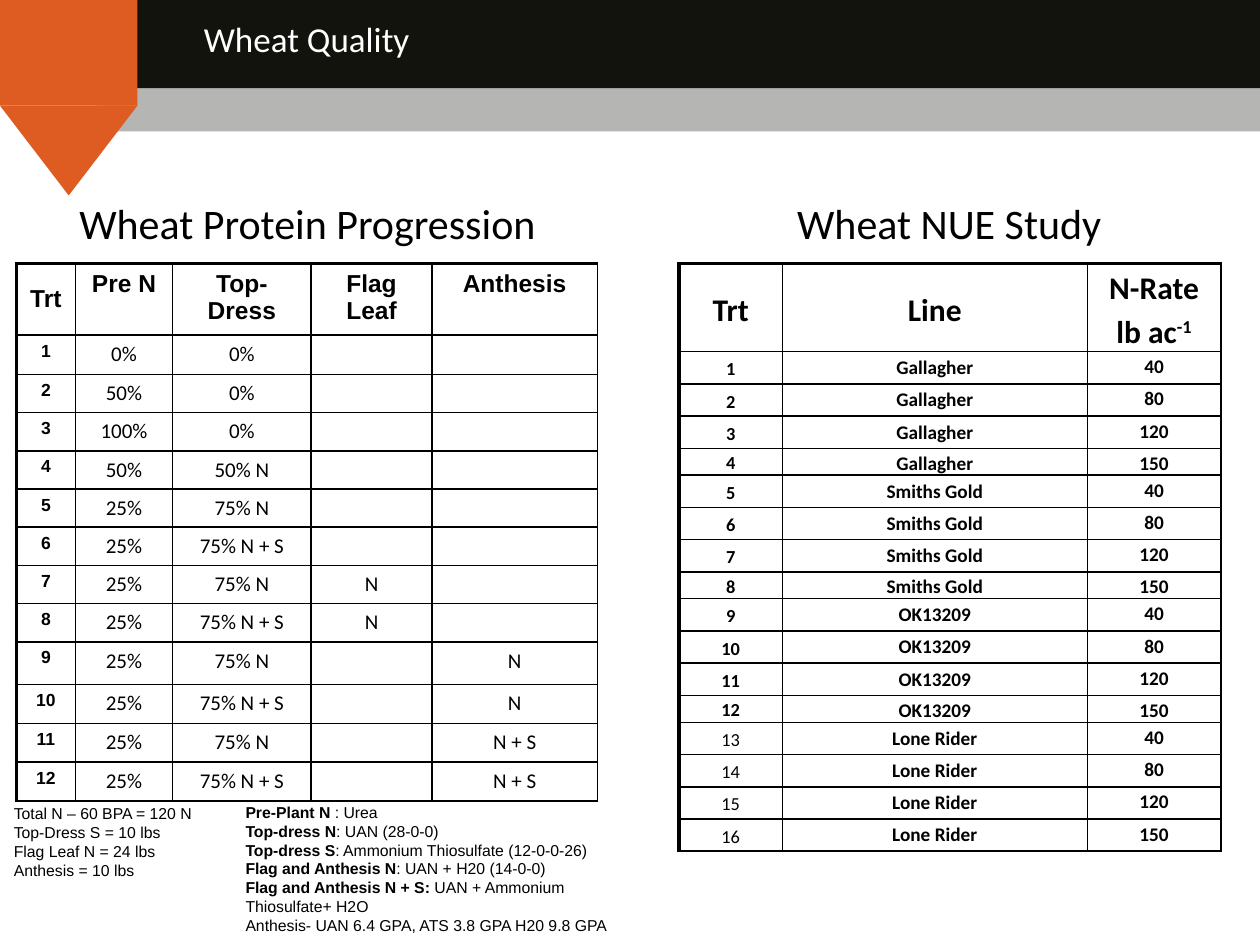
import lxml.etree
import pptx
import pptx.dml.color
import pptx.enum.shapes
import pptx.enum.text
import pptx.oxml.ns
import pptx.util

Cm, Pt = pptx.util.Cm, pptx.util.Pt
RGB = pptx.dml.color.RGBColor
SHAPE = pptx.enum.shapes.MSO_SHAPE
ALIGN = pptx.enum.text.PP_ALIGN
ANCHOR = pptx.enum.text.MSO_ANCHOR
qn = pptx.oxml.ns.qn

BLACK = RGB(0x00, 0x00, 0x00)
WHITE = RGB(0xFF, 0xFF, 0xFF)
INK = RGB(0x13, 0x13, 0x0D)
GREY = RGB(0xA9, 0xAA, 0xA8)
ORANGE = RGB(0xDE, 0x5B, 0x21)

BANNER_TITLE = dict(name="Calibri", size=Pt(20))
TITLE = dict(name="Calibri", size=Pt(24))
NOTE = dict(name="Arial", size=Pt(9))
HEAD = dict(name="Arial", size=Pt(14), bold=True)
TRT = dict(name="Arial", size=Pt(10), bold=True)
DOSE = dict(name="Calibri", size=Pt(12), bold=False)
NUE_HEAD = dict(name="Calibri", size=Pt(18), bold=True)
NUE_TRT = dict(name="Calibri", size=Pt(10.5))
NUE_BODY = dict(name="Calibri", size=Pt(11), bold=True)

PRE_N = ["0%", "50%", "100%", "50%"] + ["25%"] * 8
TOP_DRESS = ["0%"] * 3 + ["50% N"] + ["75% N", "75% N + S"] * 4
FLAG_LEAF = [""] * 6 + ["N"] * 2 + [""] * 4
ANTHESIS = [""] * 8 + ["N"] * 2 + ["N + S"] * 2
LINES = ["Gallagher", "Smiths Gold", "OK13209", "Lone Rider"]
RATES = ["40", "80", "120", "150"]

RATE_NOTES = [[("Total N – 60 BPA = 120 N\nTop-Dress S = 10 lbs\n"
                "Flag Leaf N = 24 lbs\nAnthesis = 10 lbs", False)]]
SOURCE_NOTES = [
    [("Pre-Plant N ", True), (": Urea\n", False),
     ("Top-dress N", True), (": UAN (28-0-0)", False)],
    [("Top-dress S", True), (": Ammonium Thiosulfate (12-0-0-26)\n", False),
     ("Flag and Anthesis N", True), (": UAN + H20 (14-0-0)\n", False),
     ("Flag and Anthesis N + S: ", True),
     ("UAN + Ammonium Thiosulfate+ H2O", False)],
    [("Anthesis- UAN 6.4 GPA, ATS 3.8 GPA H20 9.8 GPA", False)],
]


def add_text(p, text, fmt, color=BLACK):
    """Add text to a paragraph, with a line break at each newline."""
    for i, part in enumerate(text.split("\n")):
        if i:
            p.add_line_break()
        if part:
            r = p.add_run()
            r.text = part
            for key, value in fmt.items():
                setattr(r.font, key, value)
            r.font.color.rgb = color


def add_box(slide, x, y, w, h, paragraphs, fmt, color=BLACK, align=None, wrap=True):
    sp = slide.shapes.add_textbox(Cm(x), Cm(y), Cm(w), Cm(h))
    tf = sp.text_frame
    tf.word_wrap = wrap
    for i, runs in enumerate(paragraphs):
        p = tf.add_paragraph() if i else tf.paragraphs[0]
        p.alignment = align
        for text, bold in runs:
            add_text(p, text, dict(fmt, bold=bold), color)


def add_grid(slide, x, y, cols, rows):
    """Add an unfilled table with ruled cells and a heavy top and left edge."""
    frame = slide.shapes.add_table(len(rows), len(cols), Cm(x), Cm(y),
                                   Cm(sum(cols)), Cm(sum(rows)))
    table = frame.table
    table.first_row = table.horz_banding = False
    for col, width in zip(table.columns, cols):
        col.width = Cm(width)
    for row, height in zip(table.rows, rows):
        row.height = Cm(height)
    for r in range(len(rows)):
        for c in range(len(cols)):
            cell = table.cell(r, c)
            tcPr = cell._tc.get_or_add_tcPr()
            widths = dict(L=1 if c else 2.25, R=1, T=1 if r else 2.25, B=1)
            for side, width in widths.items():
                ln = lxml.etree.SubElement(tcPr, qn(f"a:ln{side}"), w=str(Pt(width)))
                fill = lxml.etree.SubElement(ln, qn("a:solidFill"))
                lxml.etree.SubElement(fill, qn("a:srgbClr"), val=str(BLACK))
            cell.fill.background()
    return table


def fill_cell(cell, text, fmt, inset=(0.25, 0.13), middle=False, spacing=None):
    cell.margin_left = cell.margin_right = Cm(inset[0])
    cell.margin_top = cell.margin_bottom = Cm(inset[1])
    cell.vertical_anchor = ANCHOR.MIDDLE if middle else ANCHOR.TOP
    p = cell.text_frame.paragraphs[0]
    p.alignment = ALIGN.CENTER
    p.line_spacing = spacing
    add_text(p, text, fmt)
    if not text:  # keeps an empty cell from stretching its row
        size = str(int(fmt["size"].pt * 100))
        lxml.etree.SubElement(p._p, qn("a:endParaRPr"), sz=size)
    return p


def add_banner(slide, x, y, w):
    group = slide.shapes.add_group_shape()
    bar_h, flag_w, flag_h = 1.78, 2.77, 2.13
    parts = [
        (SHAPE.RECTANGLE, 1.95, 1.6, w - 1.95, 1.05, GREY),
        (SHAPE.RECTANGLE, 0, 0, w, bar_h, INK),
        (SHAPE.RECTANGLE, 0, 0, flag_w, flag_h, ORANGE),
        (SHAPE.ISOSCELES_TRIANGLE, 0, flag_h, flag_w, 1.81, ORANGE),
    ]
    for kind, dx, dy, width, height, color in parts:
        sp = group.shapes.add_shape(kind, Cm(x + dx), Cm(y + dy), Cm(width), Cm(height))
        sp.shadow.inherit = False
        sp.fill.solid()
        sp.fill.fore_color.rgb = color
        sp.line.fill.background()
        if kind == SHAPE.ISOSCELES_TRIANGLE:
            sp.rotation = 180
        if color == GREY:
            clr = sp._element.spPr.find(".//" + qn("a:srgbClr"))
            lxml.etree.SubElement(clr, qn("a:alpha"), val="86000")
    add_box(slide, x + 3.86, y + 0.23, 20.32, 1.12,
            [[("Wheat Quality", False)]], BANNER_TITLE, WHITE)


def add_protein_panel(slide, x, y):
    # Treatment table
    rows = [1.41, 0.79] + [0.77] * 7 + [0.86, 0.79, 0.77, 0.79]
    table = add_grid(slide, x + 0.33, y + 1.45, [1.19, 1.96, 2.79, 2.44, 3.33], rows)
    for c, text in enumerate(["Trt", "Pre N", "Top-Dress", "Flag Leaf", "Anthesis"]):
        fill_cell(table.cell(0, c), text, HEAD, middle=c == 0)
    for r, doses in enumerate(zip(PRE_N, TOP_DRESS, FLAG_LEAF, ANTHESIS), 1):
        fill_cell(table.cell(r, 0), str(r), TRT)
        for c, dose in enumerate(doses, 1):
            fill_cell(table.cell(r, c), dose, DOSE)
    # Heading and notes
    add_box(slide, x + 1.3, y, 9.8, 1.27, [[("Wheat Protein Progression", False)]],
            TITLE, align=ALIGN.CENTER, wrap=False)
    add_box(slide, x + 0.03, y + 12.22, 4.65, 2.95, RATE_NOTES, NOTE)
    add_box(slide, x + 4.7, y + 12.19, 8.05, 2.95, SOURCE_NOTES, NOTE)


def add_nue_panel(slide, x, y):
    # Line and rate table
    flat = dict(inset=(0.25, 0), spacing=1.15)
    rows = [1.78] + ([0.65] * 3 + [0.54]) * 3 + [0.65] * 4
    table = add_grid(slide, x, y + 1.45, [2.08, 6.15, 2.69], rows)
    for c, text in enumerate(["Trt", "Line", "N-Rate\nlb ac"]):
        p = fill_cell(table.cell(0, c), text, NUE_HEAD, middle=True, **flat)
    add_text(p, "-1", NUE_HEAD)
    p.runs[-1].font._element.set("baseline", "30000")
    trials = [(line, rate) for line in LINES for rate in RATES]
    for r, (line, rate) in enumerate(trials, 1):
        tight = rows[r] == 0.54
        fill_cell(table.cell(r, 0), str(r), dict(NUE_TRT, bold=r <= 12),
                  middle=True, **flat)
        fill_cell(table.cell(r, 1), line, NUE_BODY,
                  **(flat if tight else dict(inset=(0.33, 0.09))))
        fill_cell(table.cell(r, 2), rate, NUE_BODY, **flat)
    # Heading
    add_box(slide, x + 2.13, y, 6.88, 1.27, [[("Wheat NUE Study", False)]],
            TITLE, wrap=False)


def main():
    prs = pptx.Presentation()
    prs.slide_width, prs.slide_height = Cm(25.4), Cm(19.05)
    slide = prs.slides.add_slide(prs.slide_layouts[6])
    add_banner(slide, 0, 0, 25.4)
    add_protein_panel(slide, 0, 3.86)
    add_nue_panel(slide, 13.69, 3.86)
    prs.save("out.pptx")


if __name__ == "__main__":
    main()
